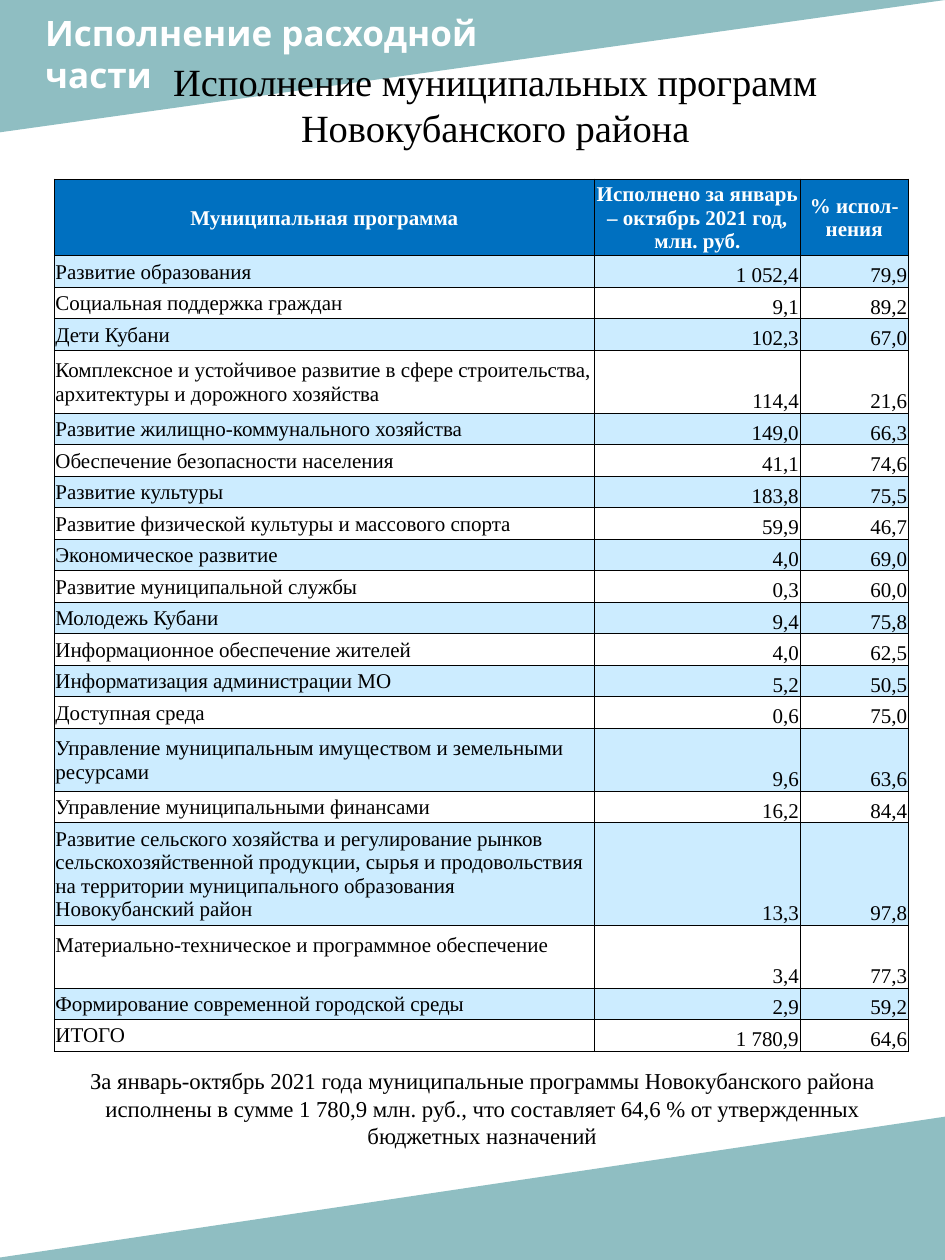
from typing import NamedTuple

from lxml.etree import SubElement
from pptx import Presentation
from pptx.dml.color import RGBColor
from pptx.enum.shapes import MSO_SHAPE as Shape
from pptx.enum.text import MSO_ANCHOR as Anchor, MSO_AUTO_SIZE as AutoSize, PP_ALIGN as Align
from pptx.oxml.ns import qn
from pptx.util import Inches, Pt

COLORS = {
    "teal": "519AA0",
    "white": "FFFFFF",
    "black": "000000",
    "header": "0070C0",
    "band": "CCECFF",
}
SERIF = "Times New Roman"
COLUMNS = (4.29, 1.63, 0.86)
HEADINGS = (
    "Муниципальная программа",
    "Исполнено за январь – октябрь 2021 год, млн. руб.",
    "% испол-нения",
)


class Box(NamedTuple):
    left: float
    top: float
    width: float
    height: float


class Style(NamedTuple):
    size: float
    color: str = "black"
    font: str = SERIF
    bold: bool = False
    align: Align = Align.LEFT


class Corner(NamedTuple):
    box: Box
    flip: str


class Label(NamedTuple):
    box: Box
    text: str
    style: Style


class Program(NamedTuple):
    name: str
    spent: str
    percent: str
    height: float = 0.25
    bottom: float = 0


CORNERS = (
    Corner(Box(0, 0, 7.5, 1.05), "flipH"),
    Corner(Box(-0.13, 8.86, 7.65, 1.14), "flipV"),
)
LABELS = (
    Label(Box(0.26, 0.04, 4.87, 0.77), "Исполнение расходной\nчасти",
          Style(20, "white", "Karla", True)),
    Label(Box(0.64, 0.41, 6.58, 0.83), "Исполнение муниципальных программ Новокубанского района",
          Style(22, align=Align.CENTER)),
    Label(Box(0.43, 8.42, 6.79, 0.76),
          "За январь-октябрь 2021 года муниципальные программы Новокубанского района "
          "исполнены в сумме 1 780,9 млн. руб., что составляет 64,6 % от утвержденных "
          "бюджетных назначений",
          Style(13, align=Align.CENTER)),
)
TABLE_BOX = Box(0.43, 1.42, 6.79, 6.99)
PROGRAMS = (
    Program("Развитие образования", "1 052,4", "79,9"),
    Program("Социальная поддержка граждан", "9,1", "89,2"),
    Program("Дети Кубани", "102,3", "67,0"),
    Program("Комплексное и устойчивое развитие в сфере строительства, "
            "архитектуры и дорожного хозяйства", "114,4", "21,6", 0.5),
    Program("Развитие жилищно-коммунального хозяйства", "149,0", "66,3"),
    Program("Обеспечение безопасности населения", "41,1", "74,6"),
    Program("Развитие культуры", "183,8", "75,5"),
    Program("Развитие физической культуры и массового спорта", "59,9", "46,7"),
    Program("Экономическое развитие", "4,0", "69,0"),
    Program("Развитие муниципальной службы", "0,3", "60,0"),
    Program("Молодежь Кубани", "9,4", "75,8"),
    Program("Информационное обеспечение жителей", "4,0", "62,5"),
    Program("Информатизация администрации МО", "5,2", "50,5"),
    Program("Доступная среда", "0,6", "75,0"),
    Program("Управление муниципальным имуществом и земельными ресурсами", "9,6", "63,6", 0.5),
    Program("Управление муниципальными финансами", "16,2", "84,4"),
    Program("Развитие сельского хозяйства и регулирование рынков "
            "сельскохозяйственной продукции, сырья и продовольствия на территории "
            "муниципального образования Новокубанский район", "13,3", "97,8", 0.74),
    Program("Материально-техническое и программное обеспечение", "3,4", "77,3", 0.5, 0.18),
    Program("Формирование современной городской среды", "2,9", "59,2"),
    Program("ИТОГО", "1 780,9", "64,6"),
)


def rgb(name: str) -> RGBColor:
    """Return a named colour."""
    return RGBColor.from_string(COLORS[name])


def place(box: Box) -> tuple:
    """Return a box as lengths."""
    return tuple(Inches(v) for v in box)


def write(tf, text: str, style: Style) -> None:
    """Set the text of a frame and format its runs."""
    tf.text = text
    for p in tf.paragraphs:
        p.alignment = style.align
        for r in p.runs:
            r.font.size = Pt(style.size)
            r.font.name = style.font
            r.font.bold = style.bold
            r.font.color.rgb = rgb(style.color)


def add_corner(s, corner: Corner) -> None:
    """Draw a translucent corner triangle."""
    sp = s.shapes.add_shape(Shape.RIGHT_TRIANGLE, *place(corner.box))
    sp.shadow.inherit = False
    sp.rotation = 180
    sp._element.spPr.find(qn("a:xfrm")).set(corner.flip, "1")
    sp.fill.solid()
    sp.fill.fore_color.rgb = rgb("teal")
    color = sp._element.spPr.find(qn("a:solidFill")).find(qn("a:srgbClr"))
    SubElement(color, qn("a:alpha")).set("val", "64000")
    sp.line.fill.background()


def add_label(s, label: Label) -> None:
    """Draw a wrapped text box."""
    tf = s.shapes.add_textbox(*place(label.box)).text_frame
    tf.word_wrap = True
    tf.auto_size = AutoSize.SHAPE_TO_FIT_TEXT
    write(tf, label.text, label.style)


def fill_cell(cell, text: str, style: Style, fill: str, anchor: Anchor, bottom: float = 0) -> None:
    """Write one table cell with its borders and fill."""
    write(cell.text_frame, text, style)
    cell.vertical_anchor = anchor
    cell.margin_left = cell.margin_right = cell.margin_top = Inches(0.01)
    cell.margin_bottom = Inches(bottom)
    tc_pr = cell._tc.get_or_add_tcPr()
    for side in ("lnL", "lnR", "lnT", "lnB"):
        line = SubElement(tc_pr, qn(f"a:{side}"), w=str(Pt(0.5)))
        solid = SubElement(line, qn("a:solidFill"))
        SubElement(solid, qn("a:srgbClr"), val=COLORS["black"])
    cell.fill.solid()
    cell.fill.fore_color.rgb = rgb(fill)


def add_programs(s) -> None:
    """Draw the table of municipal programs."""
    frame = s.shapes.add_table(len(PROGRAMS) + 1, len(COLUMNS), *place(TABLE_BOX))
    table = frame.table
    for column, width in zip(table.columns, COLUMNS):
        column.width = Inches(width)
    table.rows[0].height = Inches(0.5)
    heading = Style(12, "white", bold=True, align=Align.CENTER)
    for c, text in enumerate(HEADINGS):
        fill_cell(table.cell(0, c), text, heading, "header", Anchor.MIDDLE)
    name, number = Style(12), Style(12, align=Align.RIGHT)
    for i, program in enumerate(PROGRAMS, 1):
        table.rows[i].height = Inches(program.height)
        fill = "band" if i % 2 else "white"
        fill_cell(table.cell(i, 0), program.name, name, fill, Anchor.MIDDLE, program.bottom)
        for c, text in enumerate((program.spent, program.percent), 1):
            fill_cell(table.cell(i, c), text, number, fill, Anchor.BOTTOM)
    frame.height = Inches(TABLE_BOX.height)


def main() -> None:
    """Build and save the slide."""
    prs = Presentation()
    prs.slide_width, prs.slide_height = Inches(7.5), Inches(10)
    s = prs.slides.add_slide(prs.slide_layouts[6])
    for corner in CORNERS:
        add_corner(s, corner)
    for label in LABELS:
        add_label(s, label)
    add_programs(s)
    prs.save("out.pptx")


if __name__ == "__main__":
    main()
